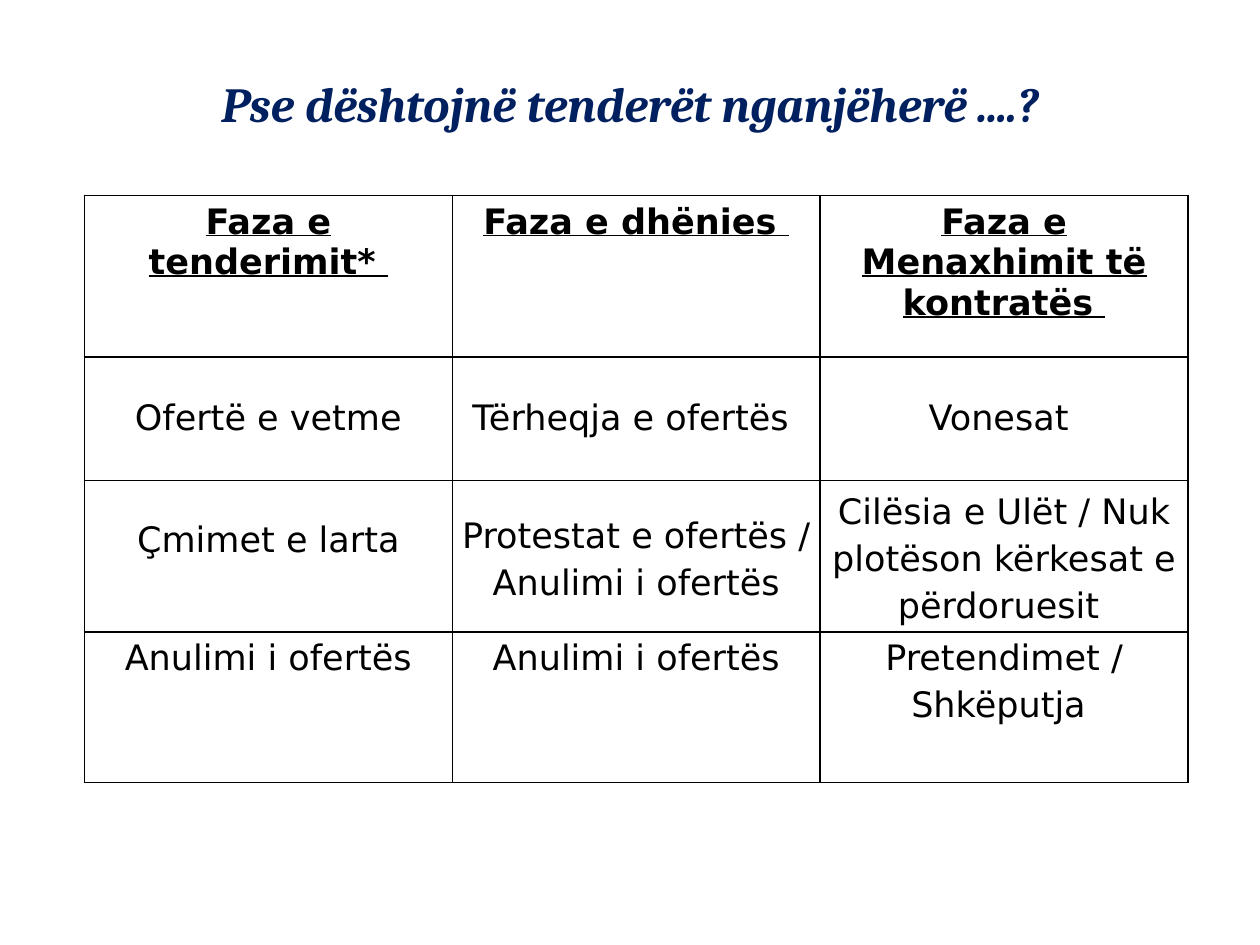
from lxml import etree
from pptx import Presentation
from pptx.dml.color import RGBColor
from pptx.enum.text import MSO_ANCHOR, PP_ALIGN
from pptx.oxml.ns import qn
from pptx.util import Inches, Pt

CENTER = PP_ALIGN.CENTER
TOP, MIDDLE = MSO_ANCHOR.TOP, MSO_ANCHOR.MIDDLE
COLORS = {"title": "002060", "text": "000000", "border": "010000"}
TITLE_ONLY = 5
ROW_HEIGHTS = [1.28, 0.98, 1.2, 1.19]
PHASES = [
    ["Faza e tenderimit* ", "Faza e dhënies ", "Faza e Menaxhimit të kontratës "],
    ["Ofertë e vetme", "Tërheqja e ofertës ", "Vonesat "],
    ["Çmimet e larta\n", "Protestat e ofertës / Anulimi i ofertës",
     "Cilësia e Ulët / Nuk plotëson kërkesat e përdoruesit "],
    ["Anulimi i ofertës", "Anulimi i ofertës", "Pretendimet / Shkëputja "],
]
ROW_FORMATS = [
    {"bold": True, "underline": True, "after": 8},
    {"after": 8},
    {"spacing": 1.15, "after": 9.6},
    {"spacing": 1.15, "after": 9.6},
]
ROW_ANCHORS = [TOP, MIDDLE, MIDDLE, TOP]


def write_text(frame, text, font="DejaVu Sans", size=20, color="text", bold=False,
               italic=False, underline=False, spacing=None, after=0):
    """Write one centred paragraph in a text frame."""
    frame.word_wrap = True
    para = frame.paragraphs[0]
    para.alignment = CENTER
    para.space_before, para.space_after = Pt(0), Pt(after)
    if spacing:
        para.line_spacing = spacing
    span = para.add_run()
    span.text = text.rstrip("\n")
    if text.endswith("\n"):
        para.add_line_break()
    span.font.name, span.font.size = font, Pt(size)
    span.font.bold, span.font.italic, span.font.underline = bold, italic, underline
    span.font.color.rgb = RGBColor.from_string(COLORS[color])


def draw_borders(cell):
    """Give a cell a thin line on every side."""
    properties = cell._tc.get_or_add_tcPr()
    for side in ("a:lnL", "a:lnR", "a:lnT", "a:lnB"):
        line = etree.SubElement(properties, qn(side), w=str(Pt(1)))
        fill = etree.SubElement(line, qn("a:solidFill"))
        etree.SubElement(fill, qn("a:srgbClr"), val=COLORS["border"])


def place_title(page, left, top, width, height):
    """Place and format the slide title."""
    title = page.shapes.title
    title.left, title.top = Inches(left), Inches(top)
    title.width, title.height = Inches(width), Inches(height)
    title.text_frame.vertical_anchor = TOP
    write_text(title.text_frame, "Pse dështojnë tenderët nganjëherë ....?",
               font="Cambria", size=28, color="title", bold=True, italic=True)


def place_phase_table(page, left, top, width, height):
    """Place the table of failure causes by tender phase."""
    table = page.shapes.add_table(len(PHASES), len(PHASES[0]), Inches(left), Inches(top),
                                  Inches(width), Inches(height)).table
    table.first_row = table.horz_banding = False
    for row_index, texts in enumerate(PHASES):
        table.rows[row_index].height = Inches(height * ROW_HEIGHTS[row_index] / sum(ROW_HEIGHTS))
        for column_index, text in enumerate(texts):
            cell = table.cell(row_index, column_index)
            draw_borders(cell)
            cell.fill.background()
            cell.vertical_anchor = ROW_ANCHORS[row_index]
            if row_index:
                cell.margin_left = cell.margin_right = Inches(0.07)
                cell.margin_top = cell.margin_bottom = 0
            write_text(cell.text_frame, text, **ROW_FORMATS[row_index])


def main():
    """Build and save the deck."""
    deck = Presentation()
    deck.slide_width, deck.slide_height = Inches(10), Inches(7.5)
    page = deck.slides.add_slide(deck.slide_layouts[TITLE_ONLY])
    place_phase_table(page, 0.67, 1.55, 8.76, 4.66)
    place_title(page, 0, 0.53, 10, 0.57)
    deck.save("out.pptx")


if __name__ == "__main__":
    main()
